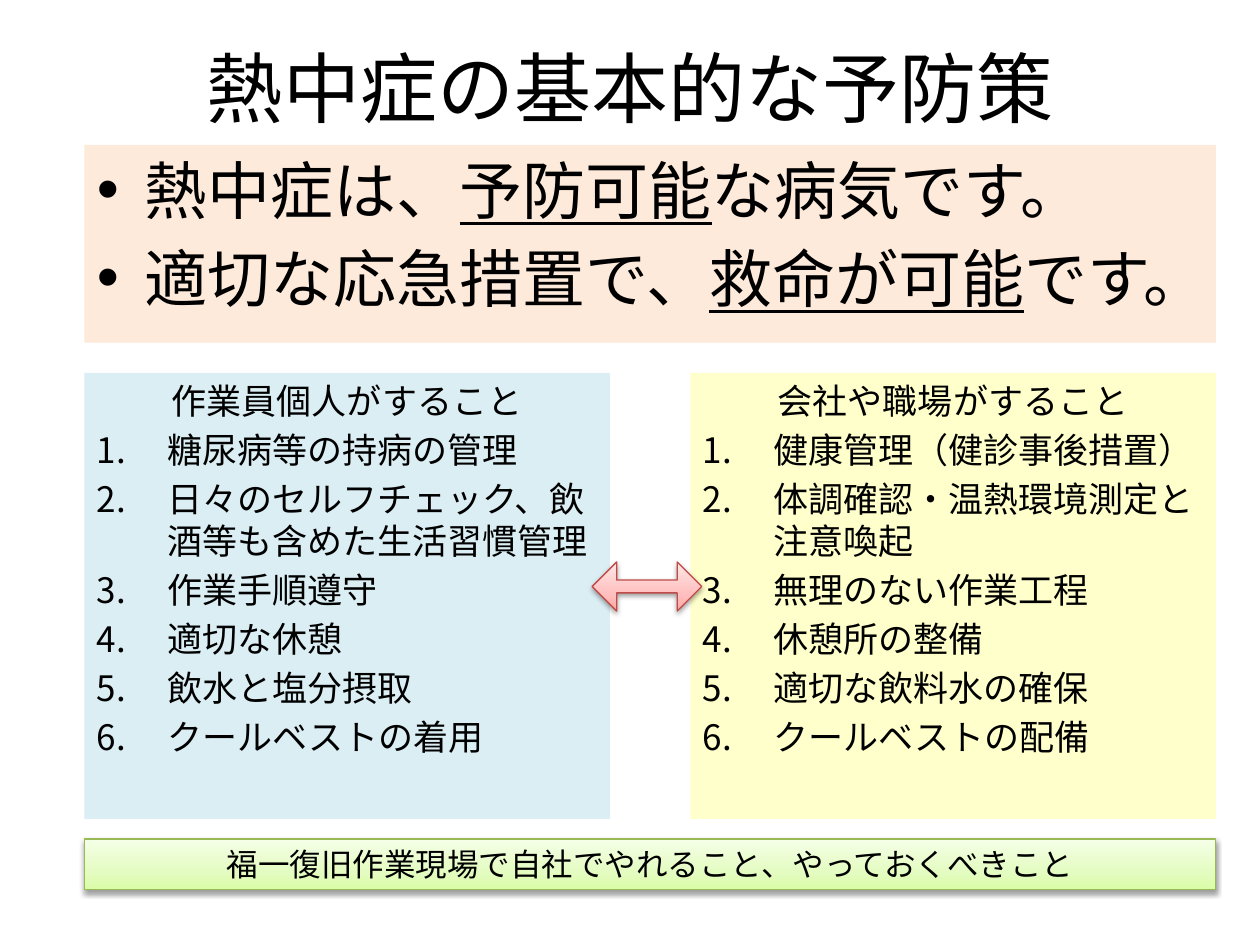
from dataclasses import dataclass

from lxml.etree import SubElement
from pptx import Presentation
from pptx.dml.color import RGBColor
from pptx.enum.shapes import MSO_SHAPE
from pptx.enum.text import MSO_ANCHOR, PP_ALIGN
from pptx.oxml.ns import qn
from pptx.util import Inches, Pt

RECT, ARROW = MSO_SHAPE.RECTANGLE, MSO_SHAPE.LEFT_RIGHT_ARROW
TOP, MIDDLE = MSO_ANCHOR.TOP, MSO_ANCHOR.MIDDLE
LEFT, CENTER = PP_ALIGN.LEFT, PP_ALIGN.CENTER


@dataclass(frozen=True)
class Theme:
    ink: str = "000000"
    peach: str = "FDEADA"
    blue: str = "DBEEF4"
    yellow: str = "FFFFCC"
    red: tuple = ("FFA6A5", "FFC0BF", "FFE7E7")
    red_edge: str = "BF4C48"
    green: tuple = ("DAFDA7", "E4FCC2", "F5FFE7")
    green_edge: str = "98B955"
    head: str = "Calibri"
    body: str = "Arial"
    title: int = 44
    lead: int = 36
    item: int = 20
    note: int = 18


THEME = Theme()

TITLE = "熱中症の基本的な予防策"
# Each lead line: before, underlined, after
LEADS = [
    ("熱中症は、", "予防可能", "な病気です。"),
    ("適切な応急措置で、", "救命が可能", "です。"),
]
PANELS = [
    ("作業員個人がすること", THEME.blue, THEME.head, [
        "糖尿病等の持病の管理",
        "日々のセルフチェック、飲酒等も含めた生活習慣管理",
        "作業手順遵守",
        "適切な休憩",
        "飲水と塩分摂取",
        "クールベストの着用",
    ]),
    ("会社や職場がすること", THEME.yellow, THEME.body, [
        "健康管理（健診事後措置）",
        "体調確認・温熱環境測定と注意喚起",
        "無理のない作業工程",
        "休憩所の整備",
        "適切な飲料水の確保",
        "クールベストの配備",
    ]),
]
NOTE = "福一復旧作業現場で自社でやれること、やっておくべきこと"

WIDE, HIGH = 10, 7.5
EDGE, SPAN, GAP = 0.67, 8.98, 0.64
COL = (SPAN - GAP) / 2
ROWS = {"lead": (1.15, 1.57), "panel": (2.96, 3.54), "arrow": (4.46, 0.39),
        "note": (6.66, 0.4)}


def add_box(slide, kind, left, row, width, anchor=TOP):
    top, height = ROWS[row]
    box = slide.shapes.add_shape(
        kind, *(Inches(n) for n in (left, top, width, height)))
    box.shadow.inherit = False
    box.line.fill.background()
    box.text_frame.word_wrap = True
    box.text_frame.vertical_anchor = anchor
    return box


def paint(box, color):
    box.fill.solid()
    box.fill.fore_color.rgb = RGBColor.from_string(color)


def gloss(box, colors, edge):
    """Give the box an upward gradient, a thin edge and a soft shadow."""
    box.fill.gradient()
    box.fill.gradient_angle = 90
    props = box.fill._xPr
    stops = props.find(qn("a:gradFill")).find(qn("a:gsLst"))
    stops.clear()
    for place, color in zip((0, 35, 100), colors):
        stop = SubElement(stops, qn("a:gs"), pos=str(place * 1000))
        SubElement(stop, qn("a:srgbClr"), val=color)
    box.line.color.rgb = RGBColor.from_string(edge)
    box.line.width = Pt(0.75)
    cast = SubElement(props.find(qn("a:effectLst")), qn("a:outerShdw"),
                      blurRad=str(Pt(3.1)), dist=str(Pt(1.6)),
                      dir="5400000", rotWithShape="0")
    shade = SubElement(cast, qn("a:srgbClr"), val="000000")
    SubElement(shade, qn("a:alpha"), val="38000")


def style(par, size, font, align=LEFT):
    par.alignment = align
    for run in par.runs:
        run.font.size = Pt(size)
        run.font.name = font
        run.font.color.rgb = RGBColor.from_string(THEME.ink)


def indent(par, depth, size, tag=None, **mark):
    """Hang the first line, space by a fifth of the size and add a bullet."""
    par.space_before = Pt(size * 0.2)
    props = par._p.get_or_add_pPr()
    props.set("marL", str(Inches(depth)))
    props.set("indent", str(-Inches(depth)))
    if tag:
        SubElement(props, qn("a:buFont"), typeface=THEME.body)
        SubElement(props, qn(tag), **mark)


def add_leads(slide):
    box = add_box(slide, RECT, EDGE, "lead", SPAN)
    paint(box, THEME.peach)
    frame = box.text_frame
    frame.text = "\n".join("" for _ in LEADS)
    for par, parts in zip(frame.paragraphs, LEADS):
        for i, part in enumerate(parts):
            run = par.add_run()
            run.text = part
            run.font.underline = i == 1
        style(par, THEME.lead, THEME.head)
        indent(par, 0.38, THEME.lead, "a:buChar", char="•")


def add_panel(slide, left, head, color, font, items):
    box = add_box(slide, RECT, left, "panel", COL)
    paint(box, color)
    box.text_frame.text = "\n".join([head, *items])
    first, *rest = box.text_frame.paragraphs
    style(first, THEME.item, font, CENTER)
    indent(first, 0.38, THEME.item)
    for par in rest:
        style(par, THEME.item, THEME.body)
        indent(par, 0.56, THEME.item, "a:buAutoNum", type="arabicPeriod")


def main():
    deck = Presentation()
    deck.slide_width, deck.slide_height = Inches(WIDE), Inches(HIGH)
    slide = deck.slides.add_slide(deck.slide_layouts[5])

    title = slide.shapes.title
    title.left, title.top = Inches(0.5), Inches(0.3)
    title.width, title.height = Inches(WIDE - 1), Inches(0.77)
    title.text_frame.text = TITLE
    title.text_frame.vertical_anchor = MIDDLE
    style(title.text_frame.paragraphs[0], THEME.title, THEME.head, CENTER)

    add_leads(slide)
    for i, panel in enumerate(PANELS):
        add_panel(slide, EDGE + i * (COL + GAP), *panel)

    arrow = add_box(slide, ARROW, 4.7, "arrow", 0.87)
    arrow.adjustments[0] = 0.26
    gloss(arrow, THEME.red, THEME.red_edge)

    note = add_box(slide, RECT, EDGE, "note", SPAN, MIDDLE)
    gloss(note, THEME.green, THEME.green_edge)
    note.text_frame.text = NOTE
    style(note.text_frame.paragraphs[0], THEME.note, THEME.head, CENTER)

    deck.save("out.pptx")


if __name__ == "__main__":
    main()
